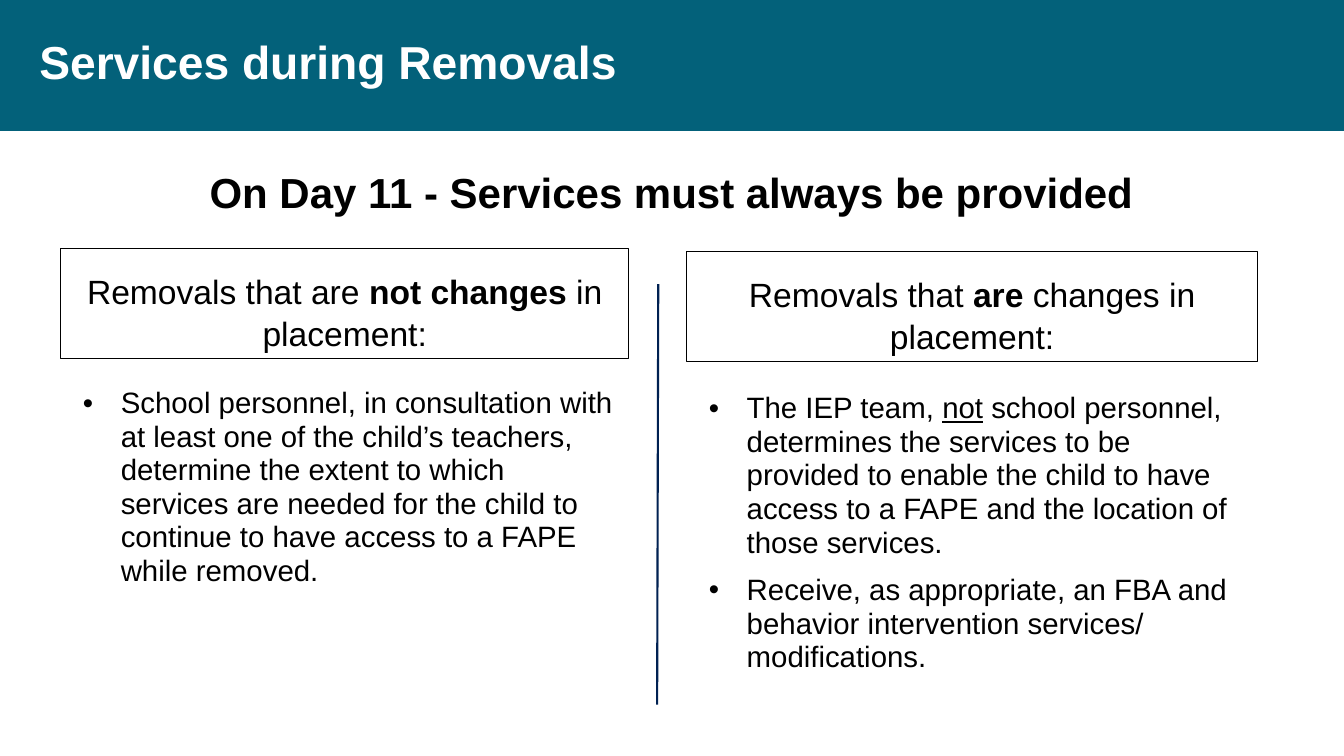
from dataclasses import dataclass

import pptx
import pptx.dml.color
import pptx.enum.shapes
import pptx.enum.text
import pptx.oxml
import pptx.oxml.ns
import pptx.util

Pt = pptx.util.Pt
ALIGN = pptx.enum.text.PP_ALIGN
ANCHOR = pptx.enum.text.MSO_ANCHOR
RECTANGLE = pptx.enum.shapes.MSO_SHAPE.RECTANGLE

TEAL, NAVY, BLACK, WHITE = "03617A", "002152", "000000", "FFFFFF"
SLIDE_WIDTH, SLIDE_HEIGHT = 960, 540
HEADING_HEIGHT, DETAILS_HEIGHT = 78.5, 200.9


@dataclass(frozen=True)
class Run:
    text: str
    bold: bool = False
    underline: bool = False


@dataclass(frozen=True)
class Column:
    left: float
    width: float
    heading_top: float
    details_top: float
    heading: list[Run]
    details: list[list[Run]]


COLUMNS = [
    Column(
        43.2, 406.1, 177.5, 272.9,
        [Run("Removals that are "), Run("not changes", bold=True), Run(" in placement:")],
        [[Run("School personnel, in consultation with at least one of the child’s "
              "teachers, determine the extent to which services are needed for the "
              "child to continue to have access to a FAPE while removed.")]],
    ),
    Column(
        490.3, 408.2, 179.5, 276.5,
        [Run("Removals that "), Run("are", bold=True), Run(" changes in placement:")],
        [[Run("The IEP team, "), Run("not", underline=True),
          Run(" school personnel, determines the services to be provided to enable the "
              "child to have access to a FAPE and the location of those services.")],
         [Run("Receive, as appropriate, an FBA and behavior intervention services/ "
              "modifications.")]],
    ),
]


def color(hex_code: str) -> pptx.dml.color.RGBColor:
    return pptx.dml.color.RGBColor.from_string(hex_code)


def set_frame(frame, anchor, side: float = 7.2, edge: float = 3.6) -> None:
    """Set wrapping, vertical anchor and insets of a text frame."""
    frame.word_wrap = True
    frame.auto_size = pptx.enum.text.MSO_AUTO_SIZE.NONE
    frame.vertical_anchor = anchor
    frame.margin_left = frame.margin_right = Pt(side)
    frame.margin_top = frame.margin_bottom = Pt(edge)


def write_runs(paragraph, runs: list[Run], size: float, ink: str = BLACK) -> None:
    for part in runs:
        run = paragraph.add_run()
        run.text = part.text
        run.font.name = "Arial"
        run.font.size = Pt(size)
        run.font.bold = part.bold
        run.font.underline = part.underline
        run.font.color.rgb = color(ink)


def add_bullet(paragraph) -> None:
    properties = paragraph._p.get_or_add_pPr()
    properties.set("marL", str(Pt(36)))
    properties.set("indent", str(-Pt(27)))
    namespace = pptx.oxml.ns.nsdecls("a")
    for xml in (
        f'<a:buClr {namespace}><a:srgbClr val="{BLACK}"/></a:buClr>',
        f'<a:buFont {namespace} typeface="Arial"/>',
        f'<a:buChar {namespace} char="•"/>',
    ):
        properties.append(pptx.oxml.parse_xml(xml))


def add_title(slide) -> None:
    title = slide.shapes.title
    band = slide.shapes.add_shape(RECTANGLE, 0, 0, Pt(SLIDE_WIDTH), Pt(93.6))
    band.shadow.inherit = False
    band.fill.solid()
    band.fill.fore_color.rgb = color(TEAL)
    band.line.fill.background()
    title.element.addprevious(band.element)

    title.left, title.top, title.width, title.height = Pt(20.9), Pt(13.7), Pt(828), Pt(64.8)
    set_frame(title.text_frame, ANCHOR.MIDDLE)
    paragraph = title.text_frame.paragraphs[0]
    paragraph.alignment = ALIGN.LEFT
    paragraph.line_spacing = 0.9
    write_runs(paragraph, [Run("Services during Removals", bold=True)], 33, WHITE)


def add_key_message(slide) -> None:
    message = slide.shapes.add_textbox(Pt(97.2), Pt(111.6), Pt(765.4), Pt(50.4))
    set_frame(message.text_frame, ANCHOR.TOP, edge=7.2)
    paragraph = message.text_frame.paragraphs[0]
    paragraph.alignment = ALIGN.CENTER
    write_runs(paragraph, [Run("On Day 11 - Services must always be provided", bold=True)], 30)


def add_column(slide, column: Column) -> None:
    heading = slide.shapes.add_shape(
        RECTANGLE, Pt(column.left), Pt(column.heading_top), Pt(column.width), Pt(HEADING_HEIGHT))
    heading.shadow.inherit = False
    heading.fill.background()
    heading.line.color.rgb = color(BLACK)
    heading.line.width = Pt(0.75)
    set_frame(heading.text_frame, ANCHOR.BOTTOM)
    paragraph = heading.text_frame.paragraphs[0]
    paragraph.alignment = ALIGN.CENTER
    paragraph.line_spacing = 1.05
    write_runs(paragraph, column.heading, 24)

    details = slide.shapes.add_textbox(
        Pt(column.left), Pt(column.details_top), Pt(column.width), Pt(DETAILS_HEIGHT))
    frame = details.text_frame
    set_frame(frame, ANCHOR.TOP)
    for index, runs in enumerate(column.details):
        paragraph = frame.add_paragraph() if index else frame.paragraphs[0]
        add_bullet(paragraph)
        paragraph.line_spacing = 0.95
        paragraph.space_before = Pt(10 if index else 0)
        write_runs(paragraph, runs, 21)


def add_divider(slide) -> None:
    divider = slide.shapes.add_connector(
        pptx.enum.shapes.MSO_CONNECTOR.STRAIGHT, Pt(470.2), Pt(203), Pt(469.4), Pt(503.3))
    divider.line.color.rgb = color(NAVY)
    divider.line.width = Pt(1.5)
    divider.element.spPr.append(
        pptx.oxml.parse_xml(f'<a:effectLst {pptx.oxml.ns.nsdecls("a")}/>'))


def main() -> None:
    deck = pptx.Presentation()
    deck.slide_width, deck.slide_height = Pt(SLIDE_WIDTH), Pt(SLIDE_HEIGHT)
    slide = deck.slides.add_slide(deck.slide_layouts.get_by_name("Title Only"))
    add_title(slide)
    add_key_message(slide)
    for column in COLUMNS:
        add_column(slide, column)
    add_divider(slide)
    deck.save("out.pptx")


if __name__ == "__main__":
    main()
